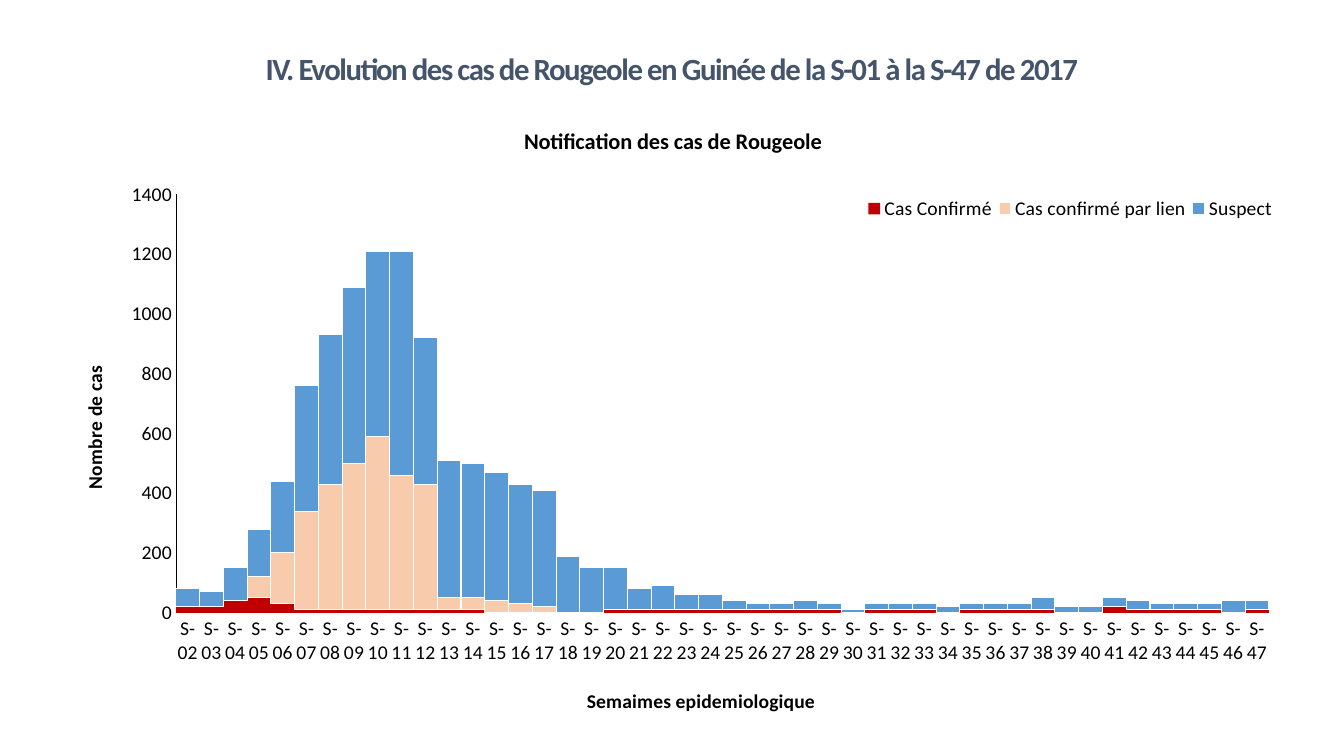
from dataclasses import dataclass
from lxml.etree import SubElement
from pptx import Presentation
from pptx.chart.data import CategoryChartData as Data
from pptx.dml.color import RGBColor as Rgb
from pptx.enum.chart import XL_CHART_TYPE as Kind, XL_LEGEND_POSITION as Side
from pptx.enum.chart import XL_TICK_MARK as Tick
from pptx.enum.text import MSO_ANCHOR as Anchor, PP_ALIGN as Align
from pptx.oxml import parse_xml
from pptx.oxml.ns import nsdecls, qn
from pptx.util import Cm, Pt


@dataclass
class Theme:
    font: str = "Calibri"
    head: str = "44546A"
    ink: str = "000000"
    edge: str = "FFFFFF"
    red: str = "C00000"
    peach: str = "F8CBAD"
    blue: str = "5B9BD5"
    big: int = 22
    mid: int = 16
    base: int = 14


class Page:
    def __init__(self, deck, theme):
        self.theme = theme
        self.slide = deck.slides.add_slide(deck.slide_layouts[5])

    def style(self, font, size, color, bold=False):
        font.name, font.size, font.bold = self.theme.font, Pt(size), bold
        font.color.rgb = Rgb.from_string(color)

    def title(self, text, *box):
        shape = self.slide.shapes.title
        shape.left, shape.top, shape.width, shape.height = map(Cm, box)
        frame = shape.text_frame
        frame.text = text
        frame.word_wrap, frame.vertical_anchor = True, Anchor.MIDDLE
        para = frame.paragraphs[0]
        para.alignment = Align.CENTER
        font = para.runs[0].font
        self.style(font, self.theme.big, self.theme.head, True)
        font._element.set("spc", "-100")

    def label(self, owner, text, size):
        frame = owner.text_frame
        frame.text = text
        self.style(frame.paragraphs[0].runs[0].font, size, self.theme.ink, True)

    def place(self, node, **spots):
        """Give a chart part a manual layout in shares of the chart."""
        old = node.find(qn("c:layout"))
        if old is not None:
            node.remove(old)
        layout = parse_xml(f"<c:layout {nsdecls('c')}><c:manualLayout/></c:layout>")
        for name, value in spots.items():
            SubElement(layout[0], qn(f"c:{name}")).set("val", str(value))
        over = node.find(qn("c:overlay"))
        if over is None:
            node.insert(0, layout)
        else:
            over.addprevious(layout)

    def chart(self, cats, series, *box):
        theme = self.theme
        data = Data()
        data.categories = cats
        for name, _, _, vals in series:
            data.add_series(name, vals)
        chart = self.slide.shapes.add_chart(
            Kind.COLUMN_STACKED, *map(Cm, box), data).chart
        self.style(chart.font, theme.base, theme.ink)

        # Stacked columns without gaps
        plot = chart.plots[0]
        plot.gap_width, plot.overlap, plot.vary_by_categories = 0, 100, False
        for bar, (_, color, edge, _) in zip(plot.series, series):
            bar.format.fill.solid()
            bar.format.fill.fore_color.rgb = Rgb.from_string(color)
            bar.invert_if_negative = False
            if edge:
                bar.format.line.color.rgb = Rgb.from_string(edge)
                bar.format.line.width = Pt(0.75)

        # Titles and axes
        chart.has_title = chart.has_legend = True
        self.label(chart.chart_title, "Notification des cas de Rougeole", theme.mid)
        weeks, cases = chart.category_axis, chart.value_axis
        for axis, text in ((weeks, "Semaimes epidemiologique"),
                           (cases, "Nombre de cas")):
            axis.has_major_gridlines = False
            axis.major_tick_mark = axis.minor_tick_mark = Tick.NONE
            self.label(axis.axis_title, text, theme.base)
        weeks.format.line.fill.background()
        cases.format.line.color.rgb = Rgb.from_string(theme.ink)
        cases.format.line.width = Pt(0.5)
        cases.minimum_scale, cases.maximum_scale, cases.major_unit = 0, 1400, 200

        # Legend and layout
        chart.legend.position = Side.BOTTOM
        chart.legend.include_in_layout = False
        edges = dict(xMode="edge", yMode="edge")
        for route, spot in (
            ("c:chart/c:title", dict(x=0.38, y=0.04)),
            (".//c:catAx/c:title", dict(x=0.43, y=0.95)),
            (".//c:valAx/c:title", dict(x=0.03, y=0.43)),
            (".//c:legend", dict(x=0.65, y=0.15, w=0.33, h=0.06)),
        ):
            self.place(chart.element.xpath(route)[0], **edges, **spot)
        self.place(chart.element.xpath(".//c:plotArea")[0], layoutTarget="inner",
                   **edges, x=0.108, y=0.157, w=0.864, h=0.678)


def main():
    deck = Presentation()
    deck.slide_width, deck.slide_height = Cm(33.87), Cm(19.05)
    theme = Theme()
    page = Page(deck, theme)
    page.title("IV. Evolution des cas de Rougeole en Guinée de la S-01 à la S-47 de 2017",
               0, 0.97, 33.87, 1.5)

    # Weekly cases
    weeks = [f"S-{n:02}" for n in range(2, 48)]
    sure = [20, 20, 40, 50, 30, *[10] * 8, *[0] * 5, *[10] * 10, 0, 10, 10, 10,
            0, 10, 10, 10, 10, 0, 0, 20, 10, 10, 10, 10, 0, 10]
    linked = [0, 0, 0, 70, 170, 330, 420, 490, 580, 450, 420, 40, 40, 40, 30, 20,
              *[0] * 29, None]
    doubt = [60, 50, 110, 160, 240, 420, 500, 590, 620, 750, 490, 460, 450, 430,
             400, 390, 190, 150, 140, 70, 80, 50, 50, 30, 20, 20, 30, 20, 10,
             *[20] * 6, 20, 40, 20, 20, 30, 30, 20, 20, 20, 40, 30]
    page.chart(weeks, [
        ("Cas Confirmé", theme.red, None, sure),
        ("Cas confirmé par lien", theme.peach, theme.edge, linked),
        ("Suspect", theme.blue, theme.edge, doubt),
    ], 0.99, 2.46, 31.88, 15.67)
    deck.save("out.pptx")


if __name__ == "__main__":
    main()
